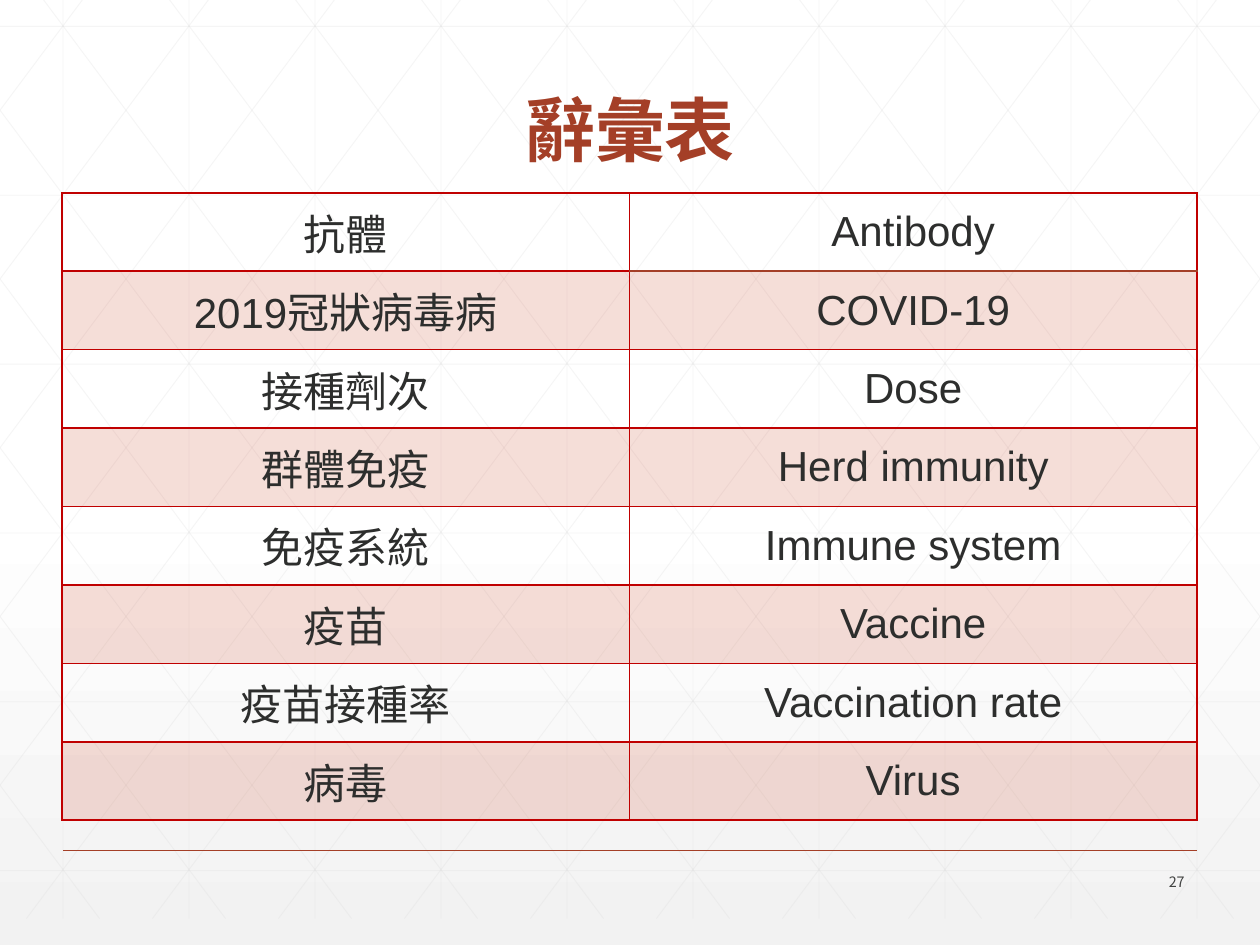
from copy import deepcopy
from typing import NamedTuple

from lxml.etree import SubElement
from pptx import Presentation
from pptx.dml.color import RGBColor
from pptx.enum.shapes import MSO_CONNECTOR
from pptx.enum.text import MSO_ANCHOR, PP_ALIGN
from pptx.oxml import parse_xml
from pptx.oxml.ns import nsdecls, qn
from pptx.util import Inches, Pt

CJK_FONT = "Noto Sans CJK TC"
WIDTH, HEIGHT = 10, 7.5
GRID_TOP, GRID_BOTTOM = -0.21, 7.29
DIAGONAL_RUN = 5.6
ACCENT, BORDER, BAND, GRID = "A43F27", "C00000", "D15A3E", "D9D9D9"


class Term(NamedTuple):
    chinese: str
    english: str


class Point(NamedTuple):
    x: float
    y: float


TERMS = [
    Term("抗體", "Antibody"),
    Term("2019冠狀病毒病", "COVID-19"),
    Term("接種劑次", "Dose"),
    Term("群體免疫", "Herd immunity"),
    Term("免疫系統", "Immune system"),
    Term("疫苗", "Vaccine"),
    Term("疫苗接種率", "Vaccination rate"),
    Term("病毒", "Virus"),
]
TITLE_FORMAT = {"name": CJK_FONT, "size": Pt(40), "bold": True}
TERM_FORMAT = {"name": "Arial", "size": Pt(24)}
NUMBER_FORMAT = {"name": CJK_FONT, "size": Pt(8.2)}


def color(value: str) -> RGBColor:
    return RGBColor.from_string(value)


def set_opacity(properties, percent: int) -> None:
    """Make the solid fill found inside the given XML element translucent."""
    solid = next(properties.iter(qn("a:srgbClr")))
    SubElement(solid, qn("a:alpha"), val=str(percent * 1000))


def add_line(shapes, start: Point, end: Point, line_color: str, width: float):
    line = shapes.add_connector(
        MSO_CONNECTOR.STRAIGHT, *(Inches(value) for value in (*start, *end)))
    line.line.color.rgb = color(line_color)
    line.line.width = Pt(width)
    SubElement(line._element.spPr, qn("a:effectLst"))
    return line


def write(frame, text: str, text_color: str, formats: dict, align) -> None:
    para = frame.paragraphs[0]
    para.alignment = align
    span = para.add_run()
    span.text = text
    span.font.color.rgb = color(text_color)
    for name, value in formats.items():
        setattr(span.font, name, value)
    SubElement(span.font._element, qn("a:ea"), typeface=CJK_FONT)


def add_text(page, area: tuple, text: str, text_color: str, formats: dict,
             align, anchor):
    box = page.shapes.add_textbox(*(Inches(value) for value in area))
    box.text_frame.word_wrap = True
    box.text_frame.vertical_anchor = anchor
    write(box.text_frame, text, text_color, formats, align)
    return box


def set_background(page) -> None:
    fill = page.background.fill
    fill.gradient()
    fill.gradient_angle = 270
    first = fill.gradient_stops[0]._gs
    first.addnext(deepcopy(first))
    for stop, position, value in zip(
            fill.gradient_stops, (0, 0.53, 1), ("FFFFFF", "FFFFFF", "F2F2F2")):
        stop.position = position
        stop.color.rgb = color(value)


def diagonal(start_x: float) -> tuple[Point, Point]:
    """Return a falling grid diagonal, cut off at the slide's sides."""
    slope = (GRID_BOTTOM - GRID_TOP) / DIAGONAL_RUN
    left, right = max(start_x, 0), min(start_x + DIAGONAL_RUN, WIDTH)
    return (Point(left, GRID_TOP + (left - start_x) * slope),
            Point(right, GRID_TOP + (right - start_x) * slope))


def add_grid(page) -> None:
    lines = [(Point(0.5 + i, GRID_TOP), Point(0.5 + i, GRID_BOTTOM))
             for i in range(10)]
    lines += [(Point(0, 0.21 + 1.34 * i), Point(WIDTH, 0.21 + 1.34 * i))
              for i in range(6)]
    falling = [diagonal(0.19 + i) for i in range(-5, 10)]
    rising = [tuple(Point(WIDTH - point.x, point.y) for point in ends)
              for ends in falling]
    group = page.shapes.add_group_shape()
    for start, end in lines + falling + rising:
        line = add_line(group.shapes, start, end, GRID, 0.5)
        set_opacity(line._element.spPr, 25)


def set_borders(cell, bottom: str, top: str) -> None:
    properties = cell._tc.get_or_add_tcPr()
    sides = {"L": BORDER, "R": BORDER, "T": top, "B": bottom}
    for index, (side, value) in enumerate(sides.items()):
        properties.insert(index, parse_xml(
            f'<a:ln{side} {nsdecls("a")} w="12700"><a:solidFill>'
            f'<a:srgbClr val="{value}"/></a:solidFill></a:ln{side}>'))


def add_glossary(page) -> None:
    table = page.shapes.add_table(
        len(TERMS), 2, Inches(0.49), Inches(1.53),
        Inches(9.01), Inches(4.98)).table
    table.first_row = table.horz_banding = False
    for row, term in enumerate(TERMS):
        for column, text in enumerate(term):
            cell = table.cell(row, column)
            cell.vertical_anchor = MSO_ANCHOR.MIDDLE
            write(cell.text_frame, text, "2D2E2D", TERM_FORMAT, PP_ALIGN.CENTER)
            if row % 2:
                cell.fill.solid()
                cell.fill.fore_color.rgb = color(BAND)
                set_opacity(cell._tc.tcPr, 20)
            else:
                cell.fill.background()
            set_borders(cell,
                        bottom=ACCENT if (row, column) == (0, 1) else BORDER,
                        top=ACCENT if (row, column) == (1, 1) else BORDER)


def main() -> None:
    deck = Presentation()
    deck.slide_width, deck.slide_height = Inches(WIDTH), Inches(HEIGHT)
    page = deck.slides.add_slide(deck.slide_layouts[6])
    set_background(page)
    add_grid(page)
    add_line(page.shapes, Point(0.5, 6.75), Point(9.5, 6.75), ACCENT, 1)
    title = add_text(page, (1.06, 0.55, 7.88, 0.86), "辭彙表", ACCENT,
                     TITLE_FORMAT, PP_ALIGN.CENTER, MSO_ANCHOR.BOTTOM)
    title.text_frame.paragraphs[0].line_spacing = 0.9
    add_glossary(page)
    add_text(page, (8.75, 6.88, 0.75, 0.24), "27", "424342",
             NUMBER_FORMAT, PP_ALIGN.RIGHT, MSO_ANCHOR.MIDDLE)
    deck.save("out.pptx")


if __name__ == "__main__":
    main()
